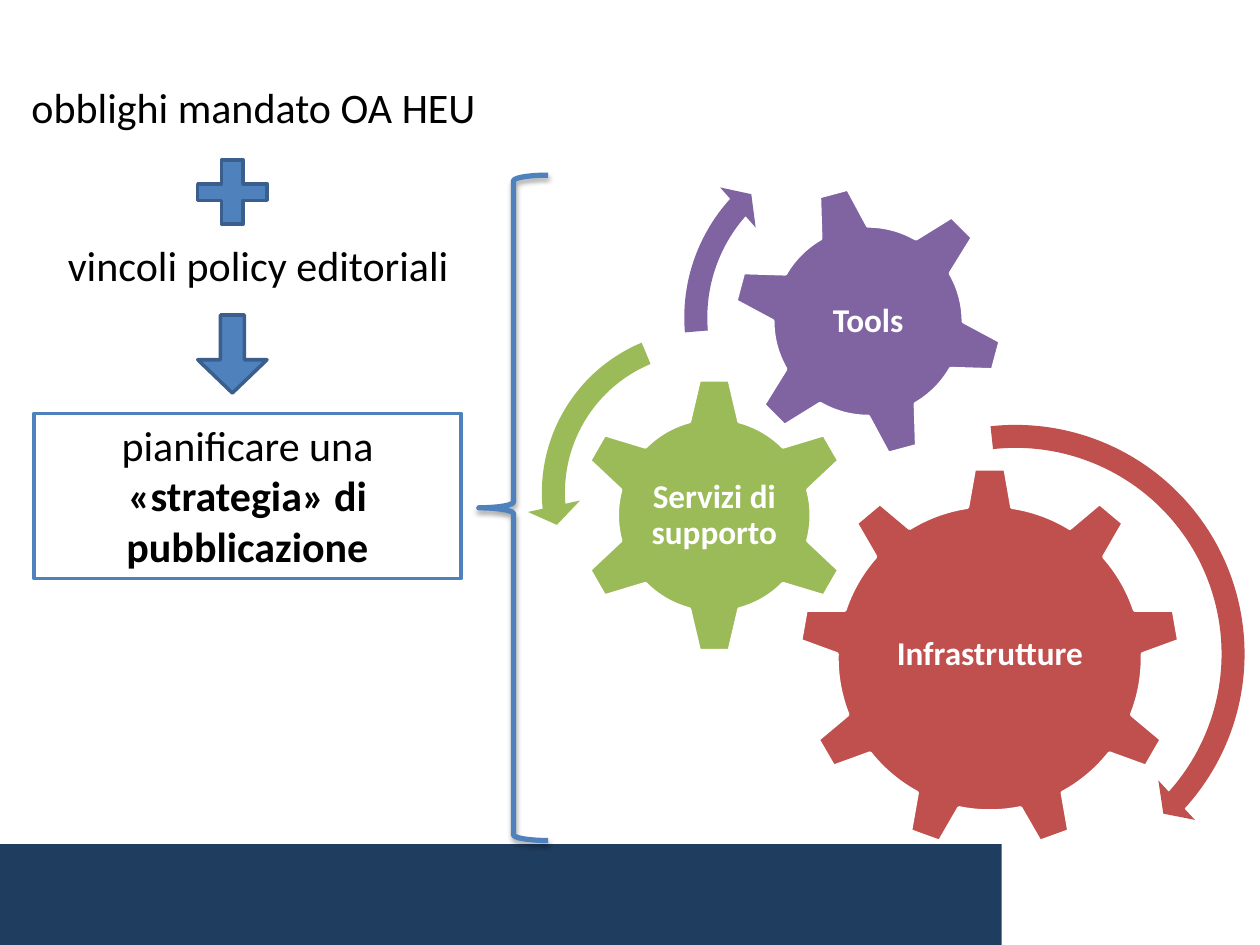
from lxml import etree
from pptx import Presentation
from pptx.dml.color import RGBColor
from pptx.enum import shapes, text
from pptx.oxml.ns import qn
from pptx.util import Pt

KIND = shapes.MSO_SHAPE
ANCHOR = text.MSO_ANCHOR
CENTER = text.PP_ALIGN.CENTER

NAVY = RGBColor(0x1F, 0x3D, 0x5F)
RED = RGBColor(0xC0, 0x50, 0x4D)
GREEN = RGBColor(0x9B, 0xBB, 0x59)
PURPLE = RGBColor(0x80, 0x64, 0xA2)
BLUE = RGBColor(0x4F, 0x81, 0xBD)
STEEL = RGBColor(0x3A, 0x5F, 0x8C)
WHITE = RGBColor(0xFF, 0xFF, 0xFF)
BLACK = RGBColor(0, 0, 0)

GEARS = [
    (KIND.GEAR_9, 456.5, 267.1, 218.2, 0, RED, "Infrastrutture", 130.3, 112.3),
    (KIND.GEAR_6, 329, 215.3, 158.4, 0, GREEN, "Servizi di supporto", 78.5, 78.5),
    (KIND.GEAR_6, 418.3, 105.8, 155.5, 345, PURPLE, "Tools", 87.1, 87.1),
]
ARCS = [
    (KIND.CIRCULAR_ARROW, 440.6, 234, 279.4, RED,
     (0.047, 2.99, 25.332, 158.25, 0.055)),
    (KIND.LEFT_CIRCULAR_ARROW, 301, 180, 203, GREEN,
     (0.065, 4.3, 104.891, 148.378, 0.075)),
    (KIND.CIRCULAR_ARROW, 382.3, 72, 218.9, PURPLE,
     (0.06, 3.941, 133.138, 105.082, 0.07)),
]
SIGNS = [
    (KIND.CROSS, (113, 91.4, 39.6, 36.7), (0.371,)),
    (KIND.DOWN_ARROW, (113, 180, 39.6, 44.6), (0.348, 0.48)),
]


def assign(item, values):
    for name, value in values.items():
        setattr(item, name, value)


def add_form(slide, kind, place, fill=None, line=None, width=2, adj=()):
    form = slide.shapes.add_shape(kind, *map(Pt, place))
    form.shadow.inherit = False
    if fill is None:
        form.fill.background()
    else:
        form.fill.solid()
        form.fill.fore_color.rgb = fill
    if line is None:
        form.line.fill.background()
    else:
        form.line.color.rgb = line
        form.line.width = Pt(width)
    for index, value in enumerate(adj):
        form.adjustments[index] = value
    return form


def add_run(para, words, size, color, bold=False):
    run = para.add_run()
    run.text = words
    assign(run.font, {"name": "Calibri", "size": Pt(size), "bold": bold})
    run.font.color.rgb = color


def add_gear(slide, kind, left, top, size, turn, color, words, wide, high):
    gear = add_form(slide, kind, (left, top, size, size), color, WHITE)
    gear.rotation = turn
    place = (left + (size - wide) / 2, top + size * 0.49 - high / 2, wide, high)
    if high == wide:
        place = (place[0], top + (size - high) / 2, wide, high)
    frame = slide.shapes.add_textbox(*map(Pt, place)).text_frame
    sides = ("left", "top", "right", "bottom")
    assign(frame, {f"margin_{side}": Pt(2) for side in sides})
    assign(frame, {"word_wrap": True, "vertical_anchor": ANCHOR.MIDDLE})
    para = frame.paragraphs[0]
    assign(para, {"alignment": CENTER, "line_spacing": 0.9})
    add_run(para, words, 19, WHITE, True)


def add_duties(slide):
    body = slide.placeholders[1]
    assign(body, {"left": Pt(8.6), "top": Pt(43.2),
                  "width": Pt(277.9), "height": Pt(187.2)})
    frame = body.text_frame
    assign(frame, {"word_wrap": True, "auto_size": text.MSO_AUTO_SIZE.NONE})
    rows = [("obblighi mandato OA HEU ", 0), ("vincoli policy editoriali", 61)]
    for index, (words, gap) in enumerate(rows):
        para = frame.add_paragraph() if index else frame.paragraphs[0]
        props = para._p.get_or_add_pPr()
        props.set("marL", "0")
        props.set("indent", "0")
        etree.SubElement(props, qn("a:buNone"))
        assign(para, {"alignment": CENTER, "space_before": Pt(gap)})
        add_run(para, words, 24, BLACK)


def add_brace(slide):
    brace = add_form(slide, KIND.LEFT_BRACE, (273.6, 100.1, 39.6, 380.2),
                     line=BLUE, width=3)
    effects = brace._element.spPr.find(qn("a:effectLst"))
    shade = etree.SubElement(effects, qn("a:outerShdw"), blurRad=str(Pt(3.1)),
                             dist=str(Pt(1.8)), dir="5400000", rotWithShape="0")
    tone = etree.SubElement(shade, qn("a:srgbClr"), val=str(BLACK))
    etree.SubElement(tone, qn("a:alpha"), val="35000")


def add_plan(slide):
    box = add_form(slide, KIND.RECTANGLE, (19.4, 236.2, 244.1, 94.3), WHITE, BLUE)
    frame = box.text_frame
    assign(frame, {"word_wrap": True, "vertical_anchor": ANCHOR.TOP})
    para = frame.paragraphs[0]
    para.alignment = CENTER
    add_run(para, "pianificare una ", 24, BLACK)
    add_run(para, "«strategia» di pubblicazione", 24, BLACK, True)


def main():
    deck = Presentation()
    assign(deck, {"slide_width": Pt(720), "slide_height": Pt(540)})
    slide = deck.slides.add_slide(deck.slide_layouts[1])
    title = slide.shapes.title._element
    title.getparent().remove(title)
    add_form(slide, KIND.RECTANGLE, (0, 482.4, 572.4, 57.6), NAVY)
    add_duties(slide)
    for gear in GEARS:
        add_gear(slide, *gear)
    for kind, left, top, size, color, adj in ARCS:
        add_form(slide, kind, (left, top, size, size), color, adj=adj)
    for kind, place, adj in SIGNS:
        add_form(slide, kind, place, BLUE, STEEL, adj=adj)
    add_brace(slide)
    add_plan(slide)
    deck.save("out.pptx")


if __name__ == "__main__":
    main()
